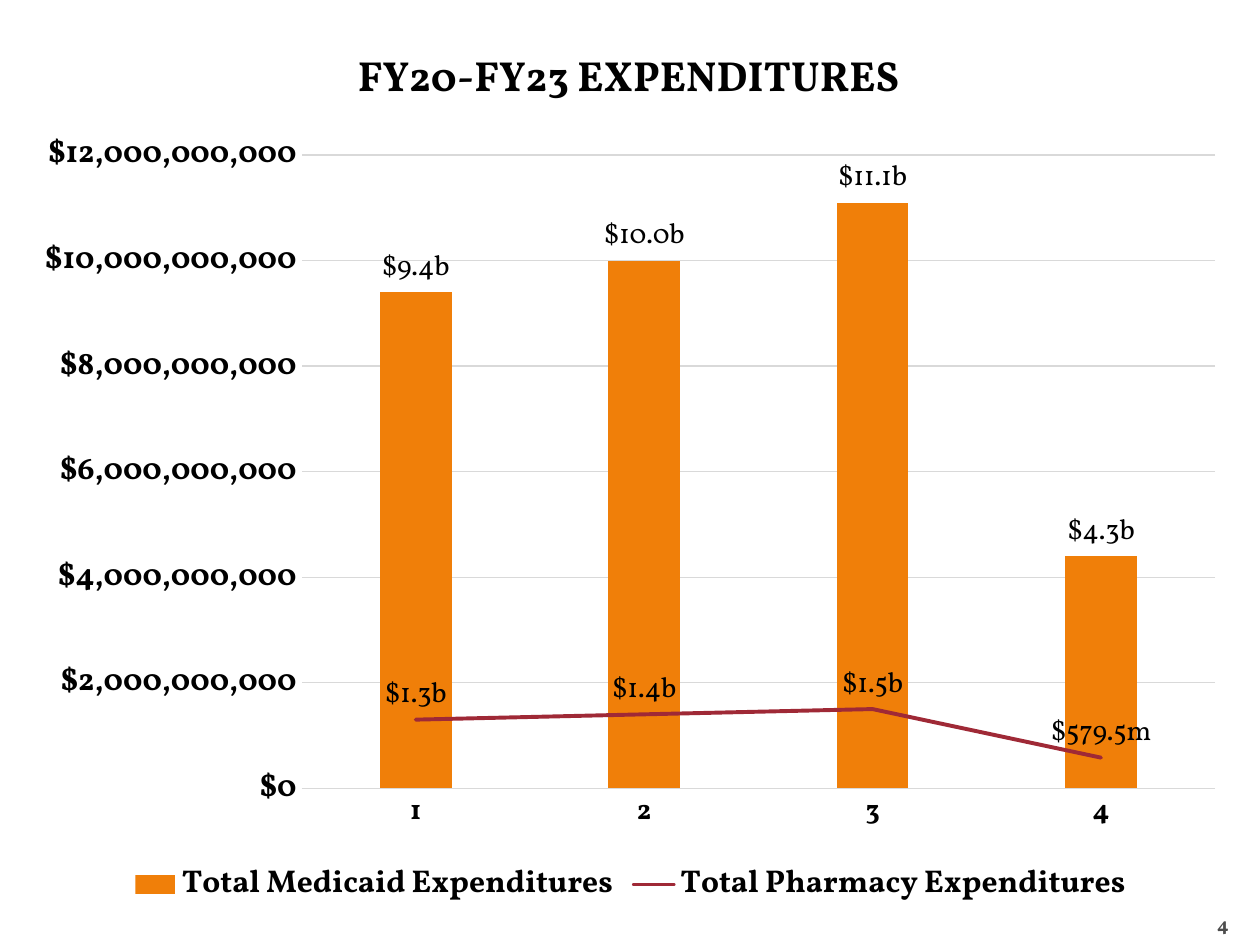
from lxml import etree
from pptx import Presentation
from pptx import util as u
from pptx.chart.data import CategoryChartData
from pptx.dml.color import RGBColor
from pptx.enum import chart as c
from pptx.enum import text as t
from pptx.oxml import parse_xml
from pptx.oxml.ns import nsdecls, qn

FONT = "Vollkorn"
BLACK = RGBColor(0x00, 0x00, 0x00)
GRAY = RGBColor(0x4D, 0x4D, 0x4D)
GRID = RGBColor(0xD9, 0xD9, 0xD9)
ORANGE = RGBColor(0xF0, 0x7F, 0x09)
MAROON = RGBColor(0x9F, 0x29, 0x36)

BILLION = 10**9
DOLLARS = '"$"#,##0'
MEDICAID = [9.4, 10.0, 11.1, 4.4]
PHARMACY = [1.3, 1.4, 1.5, 0.58]
MEDICAID_LABELS = ["$9.4b", "$10.0b", "$11.1b", "$4.3b"]
PHARMACY_LABELS = ["$1.3b", "$1.4b", "$1.5b", "$579.5m"]


def style_font(font, size, color=BLACK, bold=True):
    font.name = FONT
    font.size = u.Pt(size)
    font.bold = bold
    font.color.rgb = color


def style_line(line, color, width):
    line.color.rgb = color
    line.width = u.Pt(width)


def add_run(paragraph, words, size, color=BLACK, bold=True):
    run = paragraph.add_run()
    run.text = words
    style_font(run.font, size, color, bold)


def manual_layout(x, y, width=None, height=None):
    """Return a c:layout element, in fractions of the chart; sized ones place the inner plot."""
    layout = etree.Element(qn("c:layout"))
    manual = etree.SubElement(layout, qn("c:manualLayout"))
    settings = [("xMode", "edge"), ("yMode", "edge"), ("x", x), ("y", y)]
    if width is not None:
        settings.insert(0, ("layoutTarget", "inner"))
        settings += [("w", width), ("h", height)]
    for name, value in settings:
        etree.SubElement(manual, qn(f"c:{name}")).set("val", str(value))
    return layout


def move_last_series_to_line(chart):
    """Turn the last column series into a line on the same axes."""
    bar = chart.plots[0]._element
    series = bar.findall(qn("c:ser"))[-1]
    invert = series.find(qn("c:invertIfNegative"))
    if invert is not None:
        series.remove(invert)
    line = parse_xml(
        f'<c:lineChart {nsdecls("c")}><c:grouping val="standard"/>'
        '<c:varyColors val="0"/><c:marker val="1"/></c:lineChart>'
    )
    line.insert(2, series)
    for axis_id in bar.findall(qn("c:axId")):
        etree.SubElement(line, qn("c:axId")).set("val", axis_id.get("val"))
    bar.addnext(line)


def label_points(series, labels, position):
    for index, words in enumerate(labels):
        label = series.points[index].data_label
        add_run(label.text_frame.paragraphs[0], words, 16, bold=False)
        label.position = position


def style_axes(chart):
    category = chart.category_axis
    style_line(category.format.line, GRID, 0.75)
    style_font(category.tick_labels.font, 16)

    value = chart.value_axis
    value.minimum_scale = 0
    value.maximum_scale = 12 * BILLION
    value.major_unit = 2 * BILLION
    value.format.line.fill.background()
    style_line(value.major_gridlines.format.line, GRID, 0.75)
    value.tick_labels.number_format = DOLLARS
    value.tick_labels.number_format_is_linked = False
    style_font(value.tick_labels.font, 18)

    for axis in (category, value):
        axis.major_tick_mark = axis.minor_tick_mark = c.XL_TICK_MARK.NONE


def style_title_and_legend(chart):
    chart.has_title = True
    title = chart.chart_title
    add_run(title.text_frame.paragraphs[0], "FY20-FY23 EXPENDITURES", 24)
    title.include_in_layout = False
    element = title._element
    for layout in element.findall(qn("c:layout")):
        element.remove(layout)
    element.find(qn("c:tx")).addnext(manual_layout(0.27, 0.02))

    chart.has_legend = True
    chart.legend.position = c.XL_LEGEND_POSITION.BOTTOM
    chart.legend.include_in_layout = False
    style_font(chart.legend.font, 18)


def add_expenditure_chart(slide):
    data = CategoryChartData(number_format=DOLLARS)
    data.categories = ["1", "2", "3", "4"]
    for name, values in (("Total Medicaid Expenditures", MEDICAID),
                         ("Total Pharmacy Expenditures", PHARMACY)):
        data.add_series(name, [round(value * BILLION) for value in values])
    chart = slide.shapes.add_chart(
        c.XL_CHART_TYPE.COLUMN_CLUSTERED,
        u.Cm(0.43), u.Cm(0.43), u.Cm(24.56), u.Cm(17.98), data,
    ).chart
    style_font(chart.font, 10, bold=False)
    move_last_series_to_line(chart)

    columns, line = chart.plots
    columns.gap_width = 219
    columns.overlap = -27
    columns.vary_by_categories = False
    medicaid, pharmacy = columns.series[0], line.series[0]
    medicaid.format.fill.solid()
    medicaid.format.fill.fore_color.rgb = ORANGE
    style_line(pharmacy.format.line, MAROON, 2.25)
    pharmacy._element.find(qn("c:spPr")).find(qn("a:ln")).set("cap", "rnd")
    pharmacy.marker.style = c.XL_MARKER_STYLE.NONE
    pharmacy.smooth = False
    label_points(medicaid, MEDICAID_LABELS, c.XL_LABEL_POSITION.OUTSIDE_END)
    label_points(pharmacy, PHARMACY_LABELS, c.XL_LABEL_POSITION.ABOVE)

    style_axes(chart)
    style_title_and_legend(chart)
    plot_area = columns._element.getparent()
    for layout in plot_area.findall(qn("c:layout")):
        plot_area.remove(layout)
    plot_area.insert(0, manual_layout(0.23, 0.15, 0.75, 0.71))


def add_page_number(slide, number):
    box = slide.shapes.add_textbox(u.Cm(23.5), u.Cm(17.83), u.Cm(1.27), u.Cm(1.02))
    frame = box.text_frame
    frame.word_wrap = True
    frame.vertical_anchor = t.MSO_ANCHOR.BOTTOM
    frame.margin_left = frame.margin_right = frame.margin_bottom = 0
    frame.margin_top = u.Cm(0.13)
    paragraph = frame.paragraphs[0]
    paragraph.alignment = t.PP_ALIGN.RIGHT
    add_run(paragraph, number, 11, GRAY)


def main():
    presentation = Presentation()
    presentation.slide_width = u.Cm(25.4)
    presentation.slide_height = u.Cm(19.05)
    slide = presentation.slides.add_slide(presentation.slide_layouts[6])
    add_page_number(slide, "4")
    add_expenditure_chart(slide)
    presentation.save("out.pptx")


if __name__ == "__main__":
    main()
